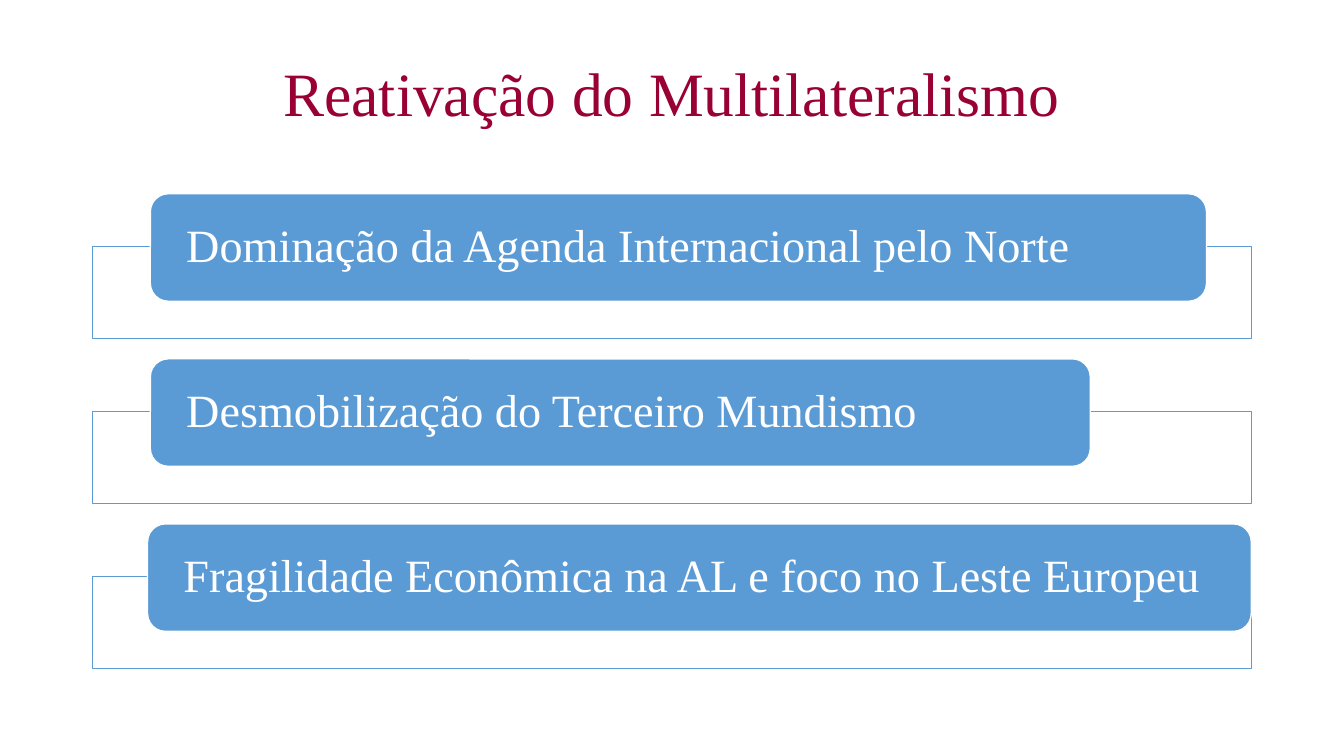
from dataclasses import dataclass

from lxml import etree
from pptx import Presentation
from pptx.dml.color import RGBColor
from pptx.enum import shapes, text
from pptx.oxml import ns
from pptx.util import Pt


@dataclass(frozen=True)
class Theme:
    font: str = "Times New Roman"
    title_size: Pt = Pt(44)
    topic_size: Pt = Pt(33)
    title: RGBColor = RGBColor(0x99, 0x00, 0x33)
    accent: RGBColor = RGBColor(0x5B, 0x9B, 0xD5)
    white: RGBColor = RGBColor(0xFF, 0xFF, 0xFF)


theme = Theme()


def add_box(kind, left, top, width, height, fill, line):
    shape = slide.shapes.add_shape(kind, Pt(left), Pt(top), Pt(width), Pt(height))
    shape.shadow.inherit = False
    shape.fill.solid()
    shape.fill.fore_color.rgb = fill
    shape.line.color.rgb = line
    shape.line.width = Pt(1)
    return shape


def style_paragraph(paragraph, size, color, alignment):
    paragraph.alignment = alignment
    paragraph.line_spacing = 0.9
    paragraph.font.name = theme.font
    paragraph.font.size = size
    paragraph.font.color.rgb = color


presentation = Presentation()
presentation.slide_width, presentation.slide_height = Pt(960), Pt(540)
slide = presentation.slides.add_slide(presentation.slide_layouts[5])

title = slide.shapes.title
title.left, title.top, title.width, title.height = Pt(66), Pt(28.8), Pt(828), Pt(80)
title.text_frame.text = "Reativação do Multilateralismo"
title.text_frame.vertical_anchor = text.MSO_ANCHOR.MIDDLE
style_paragraph(title.text_frame.paragraphs[0], theme.title_size, theme.title,
                text.PP_ALIGN.CENTER)

# Topic, left edge and width of its bar
topics = [
    ("Dominação da Agenda Internacional pelo Norte", 107.4, 754.4),
    ("Desmobilização do Terceiro Mundismo", 107.4, 671.4),
    ("Fragilidade Econômica na AL e foco no Leste Europeu", 105.4, 788.4),
]
first_top, row_step, bar_rise = 176.2, 117.9, 37.8

for row, (topic, bar_left, bar_width) in enumerate(topics):
    frame_top = first_top + row * row_step

    frame = add_box(shapes.MSO_SHAPE.RECTANGLE, 66, frame_top, 828, 65.5,
                    theme.white, theme.accent)
    fill_color = frame.fill._xPr.find(".//" + ns.qn("a:srgbClr"))
    etree.SubElement(fill_color, ns.qn("a:alpha"), val="90000")

    bar = add_box(shapes.MSO_SHAPE.ROUNDED_RECTANGLE, bar_left, frame_top - bar_rise,
                  bar_width, 76.8, theme.accent, theme.white)
    text_frame = bar.text_frame
    text_frame.word_wrap = True
    text_frame.vertical_anchor = text.MSO_ANCHOR.MIDDLE
    text_frame.margin_left = text_frame.margin_right = Pt(21.9)
    text_frame.margin_top = text_frame.margin_bottom = 0
    text_frame.text = topic
    style_paragraph(text_frame.paragraphs[0], theme.topic_size, theme.white,
                    text.PP_ALIGN.LEFT)

presentation.save("out.pptx")
